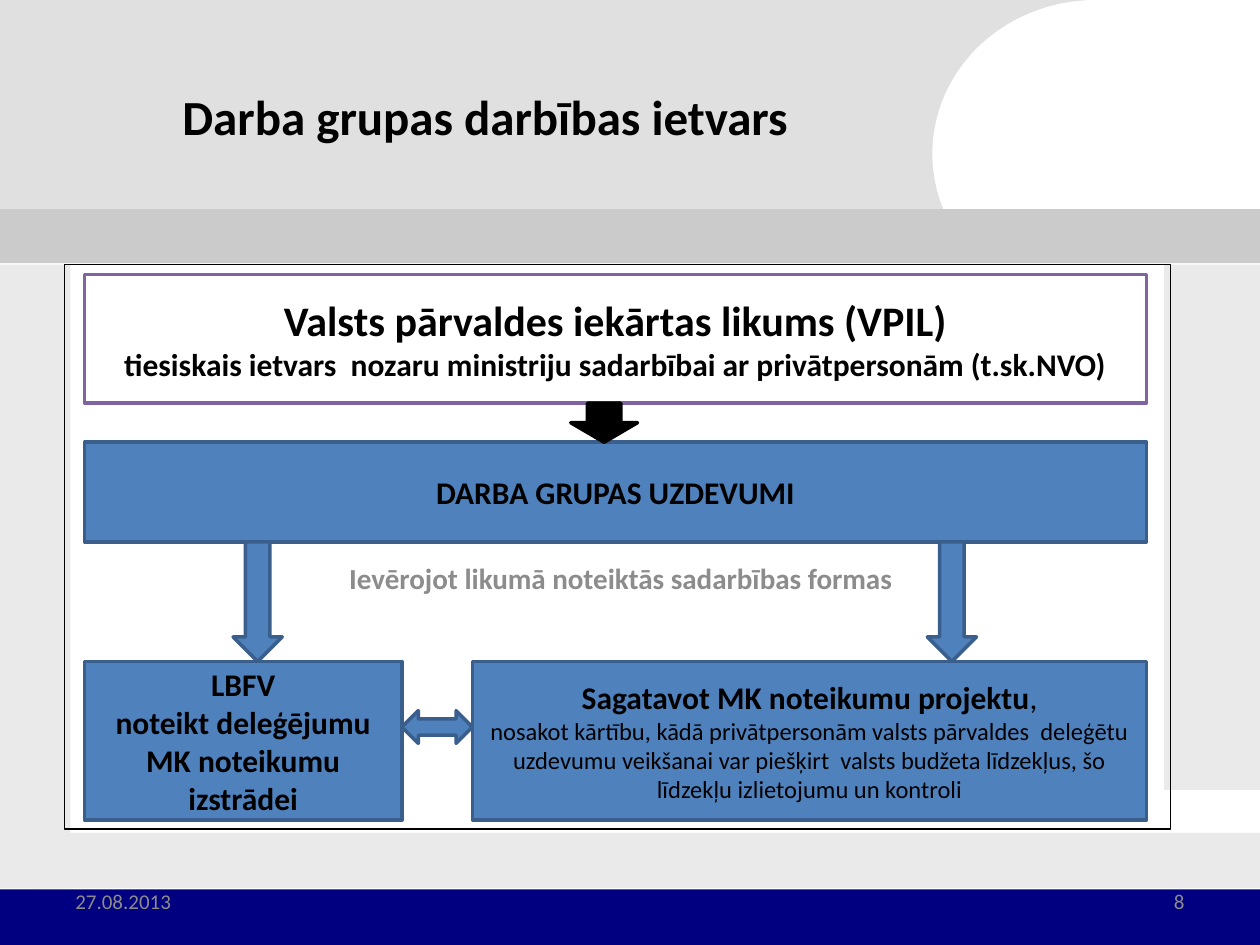
import collections

import pptx
import pptx.dml.color
import pptx.enum.shapes
import pptx.enum.text
import pptx.util

RGBColor = pptx.dml.color.RGBColor
SHAPE = pptx.enum.shapes.MSO_SHAPE
ALIGN = pptx.enum.text.PP_ALIGN
ANCHOR = pptx.enum.text.MSO_ANCHOR

BLACK = RGBColor(0x00, 0x00, 0x00)
WHITE = RGBColor(0xFF, 0xFF, 0xFF)
PALE = RGBColor(0xEA, 0xEA, 0xEA)
SILVER = RGBColor(0xE0, 0xE0, 0xE0)
BAND = RGBColor(0xCB, 0xCB, 0xCB)
NAVY = RGBColor(0x00, 0x00, 0x80)
MUTED = RGBColor(0x8C, 0x8C, 0x8C)
BLUE = RGBColor(0x4F, 0x81, 0xBD)
EDGE = RGBColor(0x3A, 0x5F, 0x8C)
PURPLE = RGBColor(0x80, 0x64, 0xA2)

FONT = "Calibri"
COLUMNS, ROWS = 100, 75
CELL = pptx.util.Inches(0.1)

Box = collections.namedtuple("Box", "left top width height")
Span = collections.namedtuple("Span", "text size bold color", defaults=(True, BLACK))


def inside(box, left, top, width, height):
    return Box(box.left + left, box.top + top, width, height)


def to_lengths(box):
    return [round(cells * CELL) for cells in box]


def write(shape, paragraphs, align=ALIGN.CENTER):
    frame = shape.text_frame
    frame.word_wrap = True
    frame.vertical_anchor = ANCHOR.MIDDLE
    for index, spans in enumerate(paragraphs):
        para = frame.paragraphs[0] if index == 0 else frame.add_paragraph()
        para.alignment = align
        for span in spans:
            run = para.add_run()
            run.text = span.text
            run.font.name = FONT
            run.font.size = pptx.util.Pt(span.size)
            run.font.bold = span.bold
            run.font.color.rgb = span.color


def add_text(page, box, span, align=ALIGN.CENTER):
    write(page.shapes.add_textbox(*to_lengths(box)), [[span]], align)


def add_figure(page, kind, box, fill=None, line=None, weight=2, paragraphs=()):
    shape = page.shapes.add_shape(kind, *to_lengths(box))
    shape.shadow.inherit = False
    if fill is None:
        shape.fill.background()
    else:
        shape.fill.solid()
        shape.fill.fore_color.rgb = fill
    if line is None:
        shape.line.fill.background()
    else:
        shape.line.color.rgb = line
        shape.line.width = pptx.util.Pt(weight)
    write(shape, paragraphs)


def draw_backdrop(page, box):
    for kind, area, fill in (
        (SHAPE.RECTANGLE, (0, 0, 90.9, 16.9), SILVER),
        (SHAPE.OVAL, (74, 0, 26, 24.4), WHITE),
        (SHAPE.RECTANGLE, (0, 21, 5.6, 49.5), PALE),
        (SHAPE.RECTANGLE, (2.6, 66.1, 97.4, 4.4), PALE),
        (SHAPE.RECTANGLE, (0, 70.6, 100, 4.4), NAVY),
        (SHAPE.RECTANGLE, (92.4, 21, 7.6, 41.7), PALE),
        (SHAPE.RECTANGLE, (86.2, 0, 13.8, 16.6), WHITE),
        (SHAPE.RECTANGLE, (0, 16.6, 100, 4.3), BAND),
    ):
        add_figure(page, kind, inside(box, *area), fill)


def draw_title(page, box):
    add_text(page, box, Span("Darba grupas darbības ietvars", 28))


def draw_footer(page, box):
    width = 23.3
    date = inside(box, 0, 0, width, box.height)
    number = inside(box, box.width - width, 0, width, box.height)
    add_text(page, date, Span("27.08.2013", 12, False, MUTED), ALIGN.LEFT)
    add_text(page, number, Span("8", 12, False, MUTED), ALIGN.RIGHT)


def draw_diagram(page, box):
    add_figure(page, SHAPE.RECTANGLE, box, line=BLACK, weight=0.75)

    margin, width = 1.6, 84.3
    law = inside(box, margin, 0.8, width, 10.2)
    tasks = inside(box, margin, 14.1, width, 7.9)
    delegation = inside(box, margin, 31.5, 25.2, 12.6)
    rules = inside(box, margin + width - 53.5, 31.5, 53.5, 12.6)

    caption = inside(tasks, 0.4, tasks.height + 0.9, width, 4)
    add_text(page, caption, Span("Ievērojot likumā noteiktās sadarbības formas", 16.6, True, MUTED))

    add_figure(page, SHAPE.RECTANGLE, law, WHITE, PURPLE, paragraphs=[
        [Span("Valsts pārvaldes iekārtas likums (VPIL)", 24)],
        [Span("tiesiskais ietvars  nozaru ministriju sadarbībai ar privātpersonām (t.sk.NVO)", 18)],
    ])
    for area, paragraphs in (
        (tasks, [[Span("DARBA GRUPAS UZDEVUMI", 18)]]),
        (delegation, [
            [Span("LBFV", 18)],
            [Span("noteikt deleģējumu MK noteikumu izstrādei", 18)],
        ]),
        (rules, [
            [Span("Sagatavot MK noteikumu projektu", 18), Span(",", 18, False)],
            [Span("nosakot kārtību, kādā privātpersonām valsts pārvaldes  deleģētu "
                  "uzdevumu veikšanai var piešķirt  valsts budžeta līdzekļus, šo "
                  "līdzekļu izlietojumu un kontroli", 14, False)],
        ]),
    ):
        add_figure(page, SHAPE.RECTANGLE, area, BLUE, EDGE, paragraphs=paragraphs)

    for upper, lower, left, breadth, fill, line in (
        (law, tasks, 38.6, 5.3, BLACK, BLACK),
        (tasks, delegation, 11.8, 3.9, BLUE, EDGE),
        (tasks, rules, 66.9, 3.9, BLUE, EDGE),
    ):
        gap = lower.top - upper.top - upper.height
        arrow = inside(upper, left, upper.height, breadth, gap)
        add_figure(page, SHAPE.DOWN_ARROW, arrow, fill, line)

    gap = rules.left - delegation.left - delegation.width
    link = inside(delegation, delegation.width, 3.9, gap, 2.6)
    add_figure(page, SHAPE.LEFT_RIGHT_ARROW, link, BLUE, EDGE)


def main():
    deck = pptx.Presentation()
    deck.slide_width = COLUMNS * CELL
    deck.slide_height = ROWS * CELL
    page = deck.slides.add_slide(deck.slide_layouts[6])
    draw_backdrop(page, Box(0, 0, COLUMNS, ROWS))
    draw_title(page, Box(7.5, 3.6, 62, 11.2))
    draw_diagram(page, Box(5.1, 21, 87.8, 44.8))
    draw_footer(page, Box(5, 69.5, 90, 4))
    deck.save("out.pptx")


if __name__ == "__main__":
    main()
